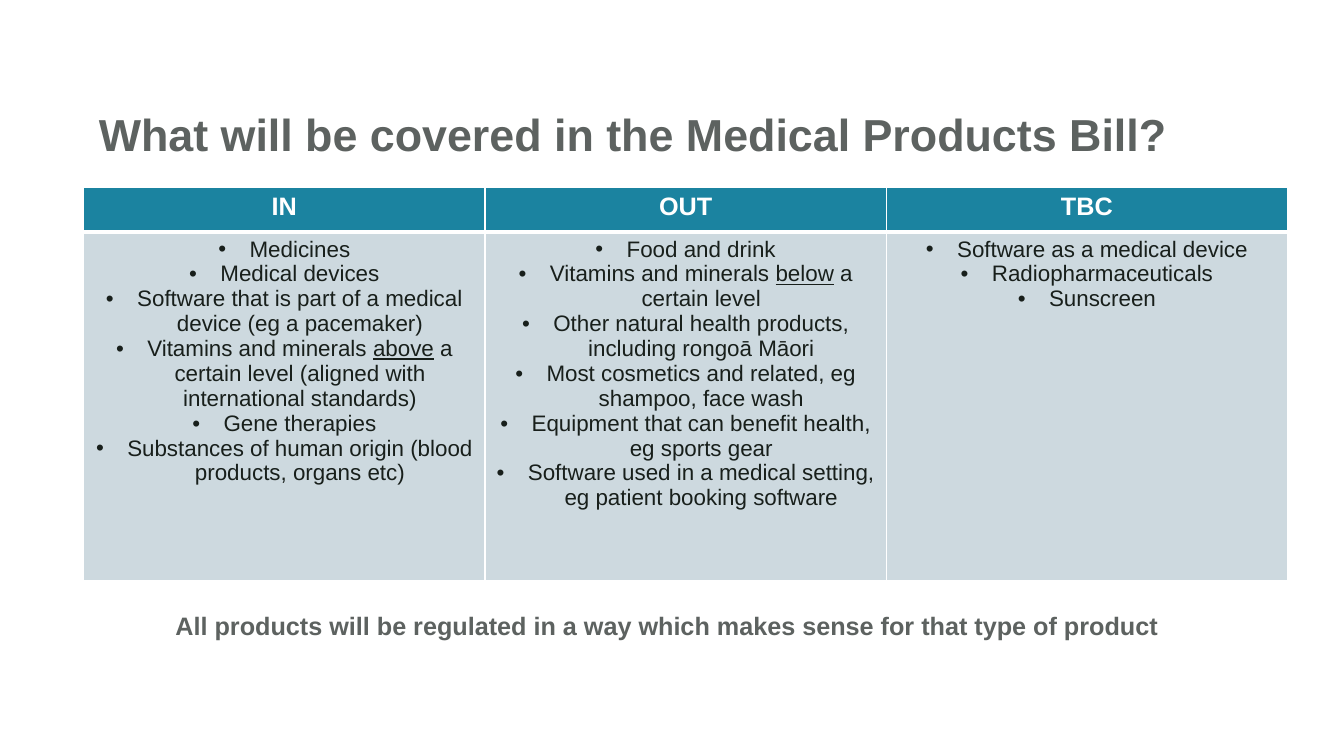
from lxml.etree import SubElement
from pptx import Presentation
from pptx.dml.color import RGBColor
from pptx.enum.text import MSO_ANCHOR, PP_ALIGN
from pptx.oxml.ns import qn
from pptx.util import Emu, Pt

PX = 9144  # 100 px to the inch
COLORS = {
    "heading": "5D6260",
    "header": "1B83A0",
    "body": "CDD9DF",
    "ink": "181F1B",
    "white": "FFFFFF",
}

# Words between asterisks are underlined.
COVERAGE = {
    "IN": [
        "Medicines",
        "Medical devices",
        "Software that is part of a medical device (eg a pacemaker)",
        "Vitamins and minerals *above* a certain level (aligned with international standards)",
        "Gene therapies",
        "Substances of human origin (blood products, organs etc)",
    ],
    "OUT": [
        "Food and drink",
        "Vitamins and minerals *below* a certain level",
        "Other natural health products, including rongoā Māori",
        "Most cosmetics and related, eg shampoo, face wash",
        "Equipment that can benefit health, eg sports gear",
        "Software used in a medical setting, eg patient booking software",
    ],
    "TBC": ["Software as a medical device", "Radiopharmaceuticals", "Sunscreen"],
}


def px(*lengths):
    return [Emu(length * PX) for length in lengths]


def rgb(color):
    return RGBColor.from_string(COLORS[color])


class SlideBuilder:
    font = "Arial"

    def __init__(self, slide):
        self.slide = slide

    def add_runs(self, paragraph, text, size, color, bold=False):
        for position, part in enumerate(text.split("*")):
            run = paragraph.add_run()
            run.text = part
            run.font.name = self.font
            run.font.size = Pt(size)
            run.font.bold = bold
            run.font.color.rgb = rgb(color)
            if position % 2:
                run.font.underline = True

    def heading(self, box, text, size, align):
        frame = self.slide.shapes.add_textbox(*px(*box)).text_frame
        frame.word_wrap = True
        frame.vertical_anchor = MSO_ANCHOR.TOP
        frame.margin_left = 0
        paragraph = frame.paragraphs[0]
        paragraph.alignment = align
        paragraph.line_spacing = 1.1
        paragraph.space_after = Pt(10)
        self.add_runs(paragraph, text, size, "heading", bold=True)

    def bullet(self, paragraph):
        properties = paragraph._p.get_or_add_pPr()
        indent = 31 * PX
        properties.set("marL", str(indent))
        properties.set("indent", str(-indent))
        SubElement(properties, qn("a:buFont"), typeface=self.font)
        SubElement(properties, qn("a:buChar"), char="•")

    def cell(self, cell, lines, size, color, fill, borders, bulleted=False):
        """Fill a cell; borders gives the left, right, top and bottom widths in points."""
        frame = cell.text_frame
        for index, line in enumerate(lines):
            paragraph = frame.add_paragraph() if index else frame.paragraphs[0]
            paragraph.alignment = PP_ALIGN.CENTER
            if bulleted:
                self.bullet(paragraph)
            self.add_runs(paragraph, line, size, color, bold=not bulleted)
        properties = cell._tc.get_or_add_tcPr()
        for side, width in zip("LRTB", borders):
            edge = SubElement(properties, qn(f"a:ln{side}"), w=str(Pt(width)))
            paint = SubElement(edge, qn("a:solidFill"))
            SubElement(paint, qn("a:srgbClr"), val=COLORS["white"])
        cell.fill.solid()
        cell.fill.fore_color.rgb = rgb(fill)

    def coverage_table(self, box, row_heights, coverage):
        table = self.slide.shapes.add_table(2, len(coverage), *px(*box)).table
        for row, height in zip(table.rows, px(*row_heights)):
            row.height = height
        for column, (status, products) in enumerate(coverage.items()):
            self.cell(table.cell(0, column), [status], 18, "white", "header", (1, 1, 1, 3))
            self.cell(table.cell(1, column), products, 16, "ink", "body", (1, 1, 3, 1),
                      bulleted=True)


def main():
    presentation = Presentation()
    presentation.slide_width, presentation.slide_height = px(1333, 750)
    builder = SlideBuilder(presentation.slides.add_slide(presentation.slide_layouts[6]))
    builder.heading((98, 96, 1073, 72), "What will be covered in the Medical Products Bill?",
                    32, PP_ALIGN.LEFT)
    builder.coverage_table((83, 186, 1194, 390), (44, 346), COVERAGE)
    builder.heading((4, 598, 1325, 56),
                    "All products will be regulated in a way which makes sense for that type of product",
                    18, PP_ALIGN.CENTER)
    presentation.save("out.pptx")


if __name__ == "__main__":
    main()
